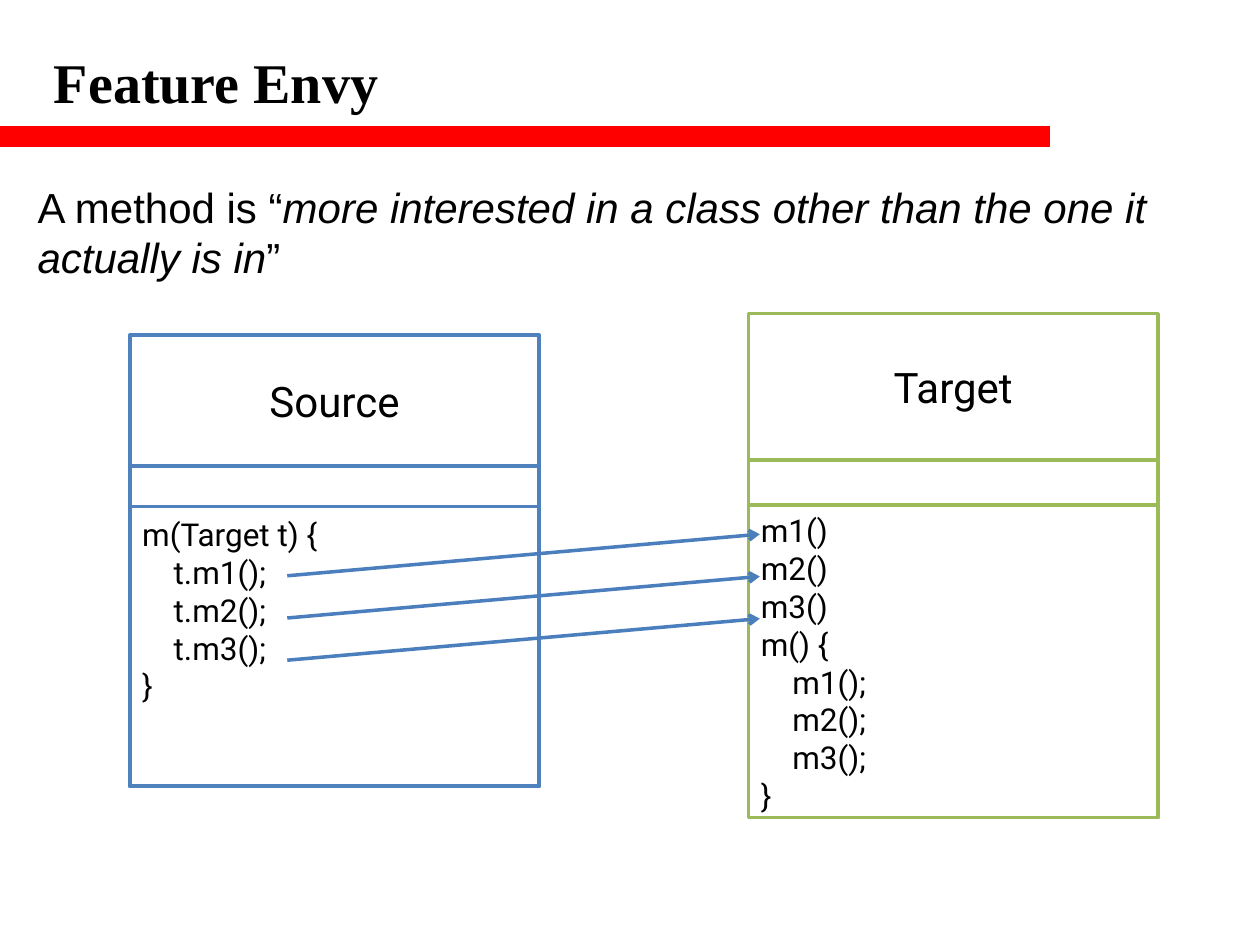
from pptx import Presentation
from pptx.dml.color import RGBColor
from pptx.enum.shapes import MSO_CONNECTOR, MSO_SHAPE
from pptx.enum.text import MSO_ANCHOR, PP_ALIGN
from pptx.oxml.ns import qn
from pptx.util import Inches, Pt
from lxml.etree import SubElement

COLS, ROWS = 100, 75
HUES = {"ink": "000000", "paper": "FFFFFF", "bar": "FF0000",
        "source": "4F81BD", "target": "9BBB59", "call": "4B7EBC"}
INDENT = Inches(0.25)


def hue(name):
    return RGBColor.from_string(HUES[name])


class Board:
    """Holds the style and the slide; lengths are grid columns and rows."""

    def __init__(self, deck):
        self.slide = deck.slides.add_slide(deck.slide_layouts[6])
        self.wide, self.high = deck.slide_width, deck.slide_height

    def place(self, *grid):
        sides = (self.wide / COLS, self.high / ROWS) * 2
        return [round(n * side) for n, side in zip(grid, sides)]

    def fill(self, frame, lines, size, font="Roboto", bold=None, align=None):
        """Each line is a string, or a list of (text, italic) runs."""
        frame.word_wrap = True
        for i, line in enumerate(lines):
            para = frame.add_paragraph() if i else frame.paragraphs[0]
            para.alignment = align
            para.font.size, para.font.name = Pt(size), font
            para.font.bold, para.font.color.rgb = bold, hue("ink")
            runs = [(line, None)] if isinstance(line, str) else line
            for text, italic in runs:
                run = para.add_run()
                run.text = text.lstrip("\t")
                run.font.italic = italic
                if text.startswith("\t"):
                    para._p.get_or_add_pPr().set("marL", str(INDENT))

    def text(self, grid, lines, size, **style):
        box = self.slide.shapes.add_textbox(*self.place(*grid))
        self.fill(box.text_frame, lines, size, **style)

    def box(self, grid, edge, lines=(), size=18, align=PP_ALIGN.LEFT,
            anchor=MSO_ANCHOR.TOP):
        rect = self.slide.shapes.add_shape(MSO_SHAPE.RECTANGLE, *self.place(*grid))
        rect.shadow.inherit = False
        rect.fill.solid()
        rect.fill.fore_color.rgb = hue("paper")
        rect.line.color.rgb, rect.line.width = hue(edge), Pt(2)
        rect.text_frame.vertical_anchor = anchor
        self.fill(rect.text_frame, lines, size, align=align)

    def line(self, grid, color, width, arrow=False):
        link = self.slide.shapes.add_connector(MSO_CONNECTOR.STRAIGHT, *self.place(*grid))
        link.line.color.rgb, link.line.width = hue(color), Pt(width)
        if arrow:
            SubElement(link.line._get_or_add_ln(), qn("a:tailEnd"), type="arrow")
        SubElement(link._element.spPr, qn("a:effectLst"))

    def model(self, name, left, top, head, split, end, edge, lines=()):
        """Class box: outline, name part, then the methods below the split."""
        wide = 32.5
        self.box((left, top + 0.2, wide, end - top - 0.2), edge)
        self.box((left, top, wide, head), edge, [name], 24,
                 PP_ALIGN.CENTER, MSO_ANCHOR.MIDDLE)
        self.box((left, split, wide, end - split), edge, lines)


def main():
    deck = Presentation()
    deck.slide_width, deck.slide_height = Inches(10), Inches(7.5)
    board = Board(deck)

    # Title, red bar and definition
    board.line((0, 10.8, 83.3, 10.8), "bar", 12)
    board.text((3.3, 3.3, 65.8, 6.3), ["Feature Envy"], 32,
               font="Times New Roman", bold=True)
    quote = "more interested in a class other than the one it actually is in"
    board.text((2, 13.9, 98, 9.1),
               [[("A method is “", False), (quote, True), ("”", False)]],
               24, font="Arial")

    # Classes
    calls = ["m1()", "m2()", "m3()"]
    board.model("Target", 59.4, 24.9, 11.6, 40.1, 64.9, "target", calls)
    board.model("Source", 10.3, 26.6, 10.4, 40.2, 62.4, "source")

    # Method bodies
    for left, top, start, owner in ((10.3, 40.4, "m(Target t) {", "t."),
                                    (59.4, 49.1, "m() {", "")):
        body = [f"\t{owner}{call};" for call in calls]
        board.text((left, top, 27.5, 16.2), [start, *body, "}"], 18)

    # Calls from source to target
    step = 3.35
    for i in range(len(calls)):
        board.line((22.8, 45.7 + i * step, 60.3, 42.4 + i * step), "call", 2, arrow=True)

    deck.save("out.pptx")


if __name__ == "__main__":
    main()
